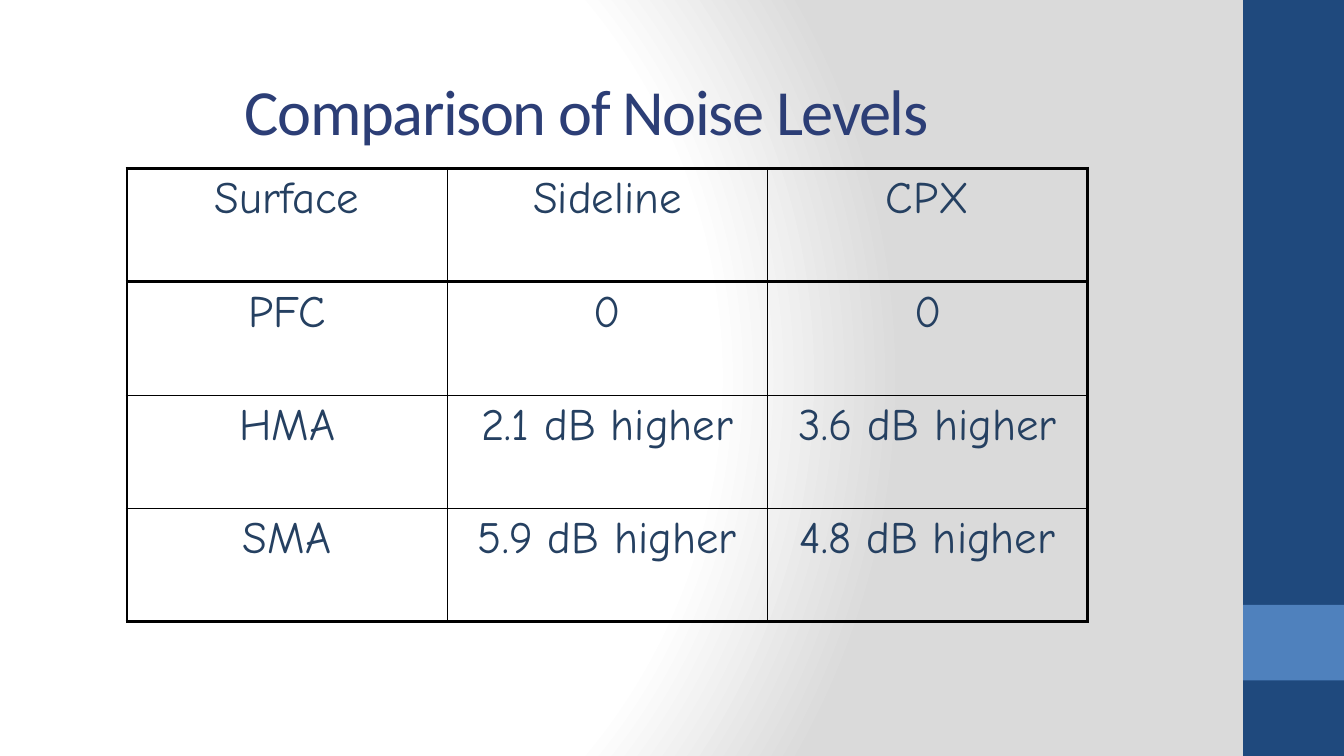
from lxml import etree
from pptx import Presentation
from pptx import util as u
from pptx.dml.color import RGBColor
from pptx.enum import shapes, text
from pptx.oxml import parse_xml
from pptx.oxml.ns import nsdecls, qn

NAVY = RGBColor(0x1F, 0x49, 0x7D)
BLUE = RGBColor(0x4F, 0x81, 0xBD)
TITLE_BLUE = RGBColor(0x2C, 0x3E, 0x76)
CELL_BLUE = RGBColor(0x25, 0x40, 0x61)
BLACK = RGBColor(0, 0, 0)
WHITE = RGBColor(0xFF, 0xFF, 0xFF)
GREY = RGBColor(0xDA, 0xDA, 0xDA)

THIN, THICK = u.Pt(1), u.Pt(2.25)

NOISE_LEVELS = [
    ["Surface", "Sideline", "CPX"],
    ["PFC", "0", "0"],
    ["HMA", "2.1 dB higher", "3.6 dB higher"],
    ["SMA", "5.9 dB higher", "4.8 dB higher"],
]


class SlideBuilder:
    """Holds the style and the current slide."""

    title_font, title_size = "Calibri", u.Pt(46)
    cell_font, cell_size = "Comic Neue", u.Pt(32)

    def __init__(self, slide):
        self.slide = slide

    def background(self, stops):
        self.slide.background.fill.solid()
        properties = self.slide.element.find(".//" + qn("p:bgPr"))
        stop_xml = "".join(
            f'<a:gs pos="{percent * 1000}"><a:srgbClr val="{color}"/></a:gs>'
            for percent, color in stops)
        gradient = parse_xml(
            f'<a:gradFill {nsdecls("a")} rotWithShape="1"><a:gsLst>{stop_xml}</a:gsLst>'
            '<a:path path="circle"><a:fillToRect l="20000" t="50000" r="100000" b="50000"/>'
            '</a:path></a:gradFill>')
        properties.replace(properties.find(qn("a:solidFill")), gradient)

    def bar(self, left, top, width, height, color):
        shape = self.slide.shapes.add_shape(
            shapes.MSO_SHAPE.RECTANGLE, *map(u.Inches, (left, top, width, height)))
        shape.shadow.inherit = False
        shape.fill.solid()
        shape.fill.fore_color.rgb = color
        shape.line.fill.background()

    def add_run(self, paragraph, wording, font, size, color):
        run = paragraph.add_run()
        run.text = wording
        run.font.name, run.font.size = font, size
        run.font.color.rgb = color
        return run

    def title(self, left, top, width, height, wording):
        box = self.slide.shapes.add_textbox(*map(u.Inches, (left, top, width, height)))
        frame = box.text_frame
        frame.word_wrap = True
        frame.vertical_anchor = text.MSO_ANCHOR.MIDDLE
        run = self.add_run(frame.paragraphs[0], wording,
                           self.title_font, self.title_size, TITLE_BLUE)
        run.font._element.set("spc", "-100")

    def cell_borders(self, cell, widths):
        properties = cell._tc.get_or_add_tcPr()
        for position, (side, width) in enumerate(widths.items()):
            line = etree.Element(qn(f"a:ln{side}"), w=str(int(width)))
            fill = etree.SubElement(line, qn("a:solidFill"))
            etree.SubElement(fill, qn("a:srgbClr"), val=str(BLACK))
            properties.insert(position, line)

    def table(self, left, top, width, height, rows):
        last_row, last_column = len(rows) - 1, len(rows[0]) - 1
        table = self.slide.shapes.add_table(
            len(rows), len(rows[0]), *map(u.Inches, (left, top, width, height))).table
        table.first_row = table.horz_banding = False
        for r, row in enumerate(rows):
            for c, wording in enumerate(row):
                cell = table.cell(r, c)
                cell.fill.background()
                paragraph = cell.text_frame.paragraphs[0]
                paragraph.alignment = text.PP_ALIGN.CENTER
                self.add_run(paragraph, wording, self.cell_font, self.cell_size, CELL_BLUE)
                # Thick outer frame and header rule, thin lines inside
                self.cell_borders(cell, {
                    "L": THICK if c == 0 else THIN,
                    "R": THICK if c == last_column else THIN,
                    "T": THICK if r <= 1 else THIN,
                    "B": THICK if r in (0, last_row) else THIN,
                })


def main():
    presentation = Presentation()
    presentation.slide_width = u.Inches(13.33)
    presentation.slide_height = u.Inches(7.5)
    builder = SlideBuilder(presentation.slides.add_slide(presentation.slide_layouts[6]))

    # Background and side bars
    builder.background([(0, WHITE), (75, WHITE), (100, GREY)])
    builder.bar(12.33, 0, 1, 7.5, NAVY)
    builder.bar(12.33, 6, 1, 0.75, BLUE)

    # Title and noise table
    builder.title(2.33, 0.25, 9.12, 1.67, "Comparison of Noise Levels")
    builder.table(1.26, 1.67, 9.53, 4.5, NOISE_LEVELS)

    presentation.save("out.pptx")


if __name__ == "__main__":
    main()
